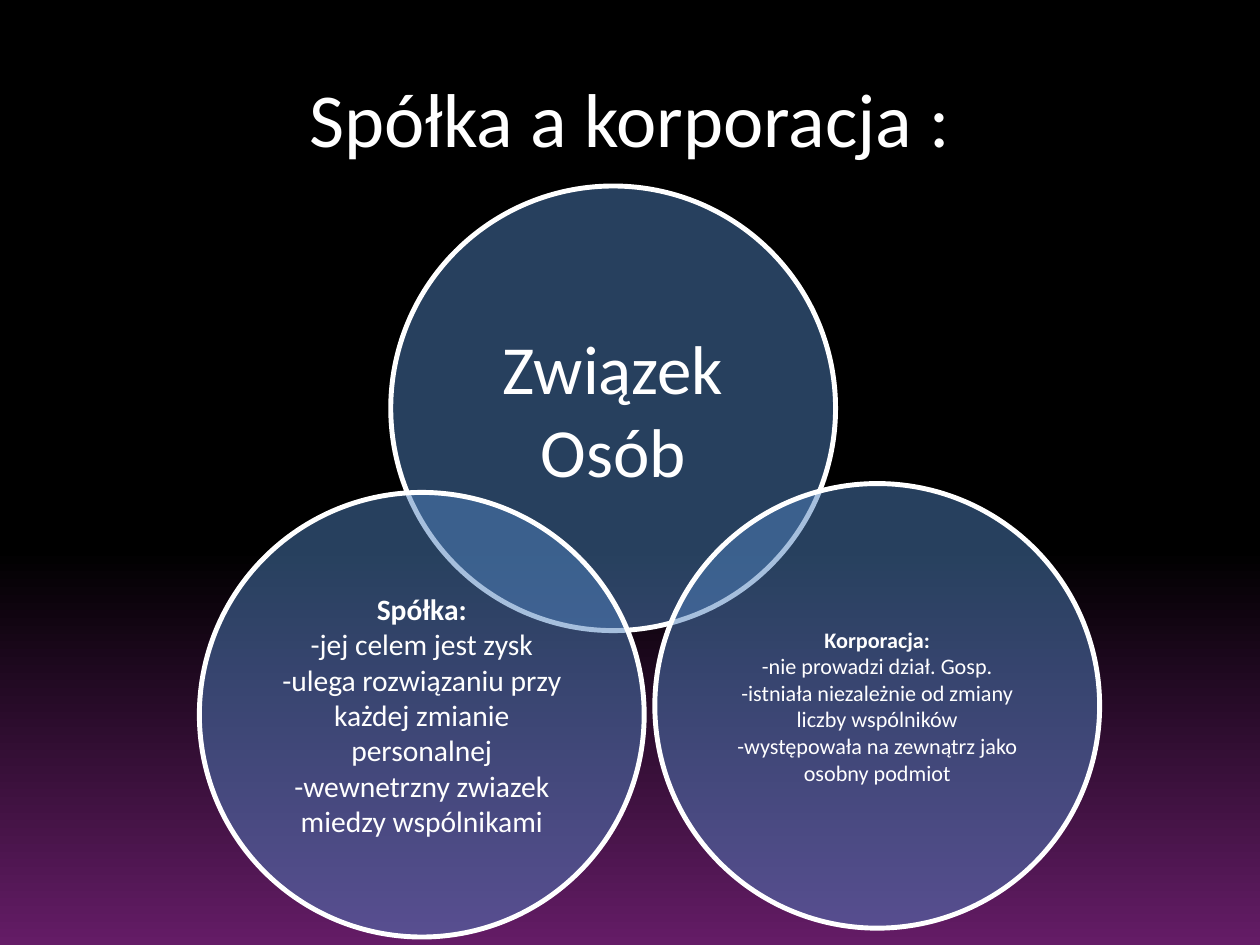
from copy import deepcopy

from lxml import etree
from pptx import Presentation
from pptx.dml.color import RGBColor
from pptx.enum.shapes import MSO_SHAPE
from pptx.enum.text import MSO_ANCHOR, PP_ALIGN
from pptx.oxml.ns import qn
from pptx.util import Inches, Pt

CENTER = PP_ALIGN.CENTER
MIDDLE = MSO_ANCHOR.MIDDLE
OVAL = MSO_SHAPE.OVAL

COLORS = {"black": "000000", "purple": "641C66", "blue": "4F81BD", "white": "FFFFFF"}
FONT = "Calibri"
DIAMETER = 5.02


def color(name):
    return RGBColor.from_string(COLORS[name])


class VennSlide:
    def __init__(self, presentation):
        self.slide = presentation.slides.add_slide(presentation.slide_layouts[6])

    def background(self):
        """Fade from purple at the bottom edge to black."""
        fill = self.slide.background.fill
        fill.gradient()
        fill.gradient_angle = 90
        for stop, name, position in zip(fill.gradient_stops, ("purple", "black"), (0, 0.42)):
            stop.color.rgb = color(name)
            stop.position = position
        stops = self.slide.element.find(".//" + qn("a:gsLst"))
        top_stop = deepcopy(stops[-1])
        top_stop.set("pos", "100000")
        stops.append(top_stop)

    def set_text(self, frame, lines, size, bold_heading=False):
        frame.word_wrap = True
        frame.vertical_anchor = MIDDLE
        frame.margin_left = frame.margin_right = Inches(0.07)
        frame.margin_top = frame.margin_bottom = Inches(0.07)
        for index, line in enumerate(lines):
            paragraph = frame.paragraphs[0] if index == 0 else frame.add_paragraph()
            paragraph.text = line
            paragraph.alignment = CENTER
            paragraph.font.name = FONT
            paragraph.font.size = Pt(size)
            paragraph.font.bold = bold_heading and index == 0
            paragraph.font.color.rgb = color("white")

    def title(self, text):
        box = self.slide.shapes.add_textbox(Inches(0.71), Inches(0.43), Inches(12.8), Inches(1.78))
        self.set_text(box.text_frame, [text], 62)

    def circle(self, left, top, lines, size, bold_heading=False):
        """Add a half-transparent circle with centred text."""
        circle = self.slide.shapes.add_shape(
            OVAL, Inches(left), Inches(top), Inches(DIAMETER), Inches(DIAMETER))
        circle.shadow.inherit = False
        circle.fill.solid()
        circle.fill.fore_color.rgb = color("blue")
        fill_color = circle.element.spPr.find(qn("a:solidFill"))[0]
        etree.SubElement(fill_color, qn("a:alpha"), val="50000")
        circle.line.color.rgb = color("white")
        circle.line.width = Pt(4)
        self.set_text(circle.text_frame, lines, size, bold_heading)


def main():
    presentation = Presentation()
    presentation.slide_width = Inches(14.22)
    presentation.slide_height = Inches(10.67)

    venn = VennSlide(presentation)
    venn.background()
    venn.title("Spółka a korporacja :")
    venn.circle(4.41, 2.1, ["Związek Osób"], 56)
    venn.circle(7.39, 5.46, [
        "Korporacja:",
        "-nie prowadzi dział. Gosp.",
        "-istniała niezależnie od zmiany liczby wspólników",
        "-występowała na zewnątrz jako osobny podmiot",
    ], 18, bold_heading=True)
    venn.circle(2.25, 5.56, [
        "Spółka:",
        "-jej celem jest zysk",
        "-ulega rozwiązaniu przy każdej zmianie personalnej",
        "-wewnetrzny zwiazek miedzy wspólnikami",
    ], 24, bold_heading=True)
    presentation.save("out.pptx")


if __name__ == "__main__":
    main()
